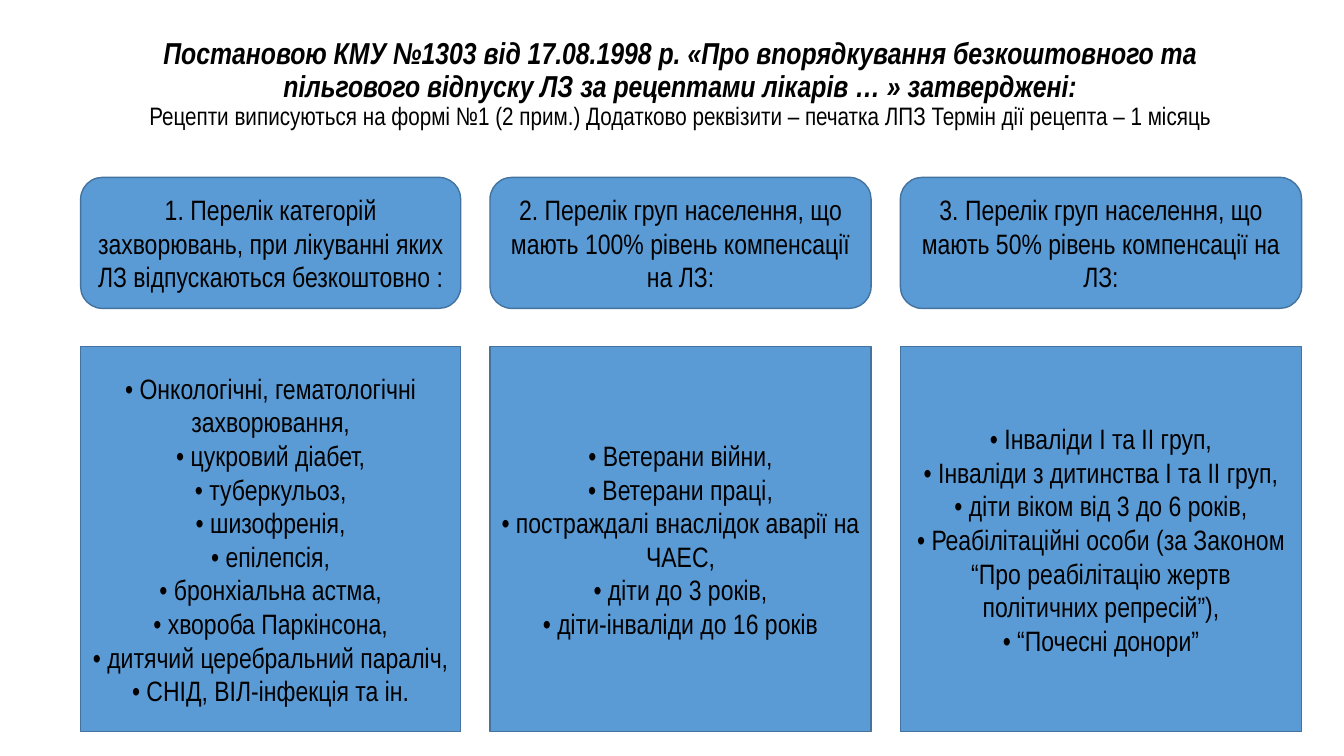
from pptx import Presentation
from pptx.dml.color import RGBColor
from pptx.enum.shapes import MSO_SHAPE as Shape
from pptx.enum.text import MSO_ANCHOR as Anchor, PP_ALIGN as Align
from pptx.util import Inches, Pt

COLORS = {"fill": "5B9BD5", "border": "43739E", "text": "000000"}
FONT = "Arial Narrow"

DECREE = ("Постановою КМУ №1303 від 17.08.1998 р. «Про впорядкування безкоштовного та "
          "пільгового відпуску ЛЗ за рецептами лікарів … » затверджені:")
PRESCRIPTION = ("Рецепти виписуються на формі №1 (2 прим.) Додатково реквізити – "
                "печатка ЛПЗ Термін дії рецепта – 1 місяць")

CATEGORIES = [
    (0.8, 3.77,
     "1. Перелік категорій захворювань, при лікуванні яких ЛЗ відпускаються безкоштовно :",
     ["Онкологічні, гематологічні захворювання,", "цукровий діабет,", "туберкульоз,",
      "шизофренія,", "епілепсія,", "бронхіальна астма,", "хвороба Паркінсона,",
      "дитячий церебральний параліч,", "СНІД, ВІЛ-інфекція та ін."]),
    (4.86, 3.78,
     "2. Перелік груп населення, що мають 100% рівень компенсації на ЛЗ:",
     ["Ветерани війни,", "Ветерани праці,", "постраждалі внаслідок аварії на ЧАЕС,",
      "діти до 3 років,", "діти-інваліди до 16 років"]),
    (8.93, 3.98,
     "3. Перелік груп населення, що мають 50% рівень компенсації на ЛЗ:",
     ["Інваліди Ι та ΙΙ груп,", "Інваліди з дитинства Ι та ΙΙ груп,",
      "діти віком від 3 до 6 років,",
      "Реабілітаційні особи (за Законом “Про реабілітацію жертв політичних репресій”),",
      "“Почесні донори”"]),
]


def add_run(paragraph, text, **formats):
    run = paragraph.add_run()
    run.text = text
    run.font.color.rgb = RGBColor.from_string(COLORS["text"])
    for attribute, value in {"name": FONT, **formats}.items():
        setattr(run.font, attribute, value)


def add_panel(kind, left, top, width, height, lines):
    panel = slide.shapes.add_shape(
        kind, Inches(left), Inches(top), Inches(width), Inches(height))
    panel.shadow.inherit = False
    panel.fill.solid()
    panel.fill.fore_color.rgb = RGBColor.from_string(COLORS["fill"])
    panel.line.color.rgb = RGBColor.from_string(COLORS["border"])
    panel.line.width = Pt(1)
    frame = panel.text_frame
    frame.word_wrap = True
    frame.vertical_anchor = Anchor.MIDDLE
    for index, line in enumerate(lines):
        paragraph = frame.add_paragraph() if index else frame.paragraphs[0]
        paragraph.alignment = Align.CENTER
        add_run(paragraph, line, size=Pt(20))


deck = Presentation()
deck.slide_width = Inches(13.33)
deck.slide_height = Inches(7.5)
slide = deck.slides.add_slide(deck.slide_layouts[6])

heading = slide.shapes.add_textbox(Inches(1), Inches(0.14), Inches(11.5), Inches(1.4)).text_frame
heading.word_wrap = True
heading.vertical_anchor = Anchor.MIDDLE
decree = heading.paragraphs[0]
decree.alignment = Align.CENTER
decree.line_spacing = 0.9
add_run(decree, DECREE, size=Pt(21.6), bold=True, italic=True)
decree.add_line_break()
add_run(decree, PRESCRIPTION, size=Pt(18))

for left, width, category, members in CATEGORIES:
    add_panel(Shape.ROUNDED_RECTANGLE, left, 1.76, width, 1.3, [category])
    add_panel(Shape.RECTANGLE, left, 3.44, width, 3.82, [f"• {member}" for member in members])

deck.save("out.pptx")
